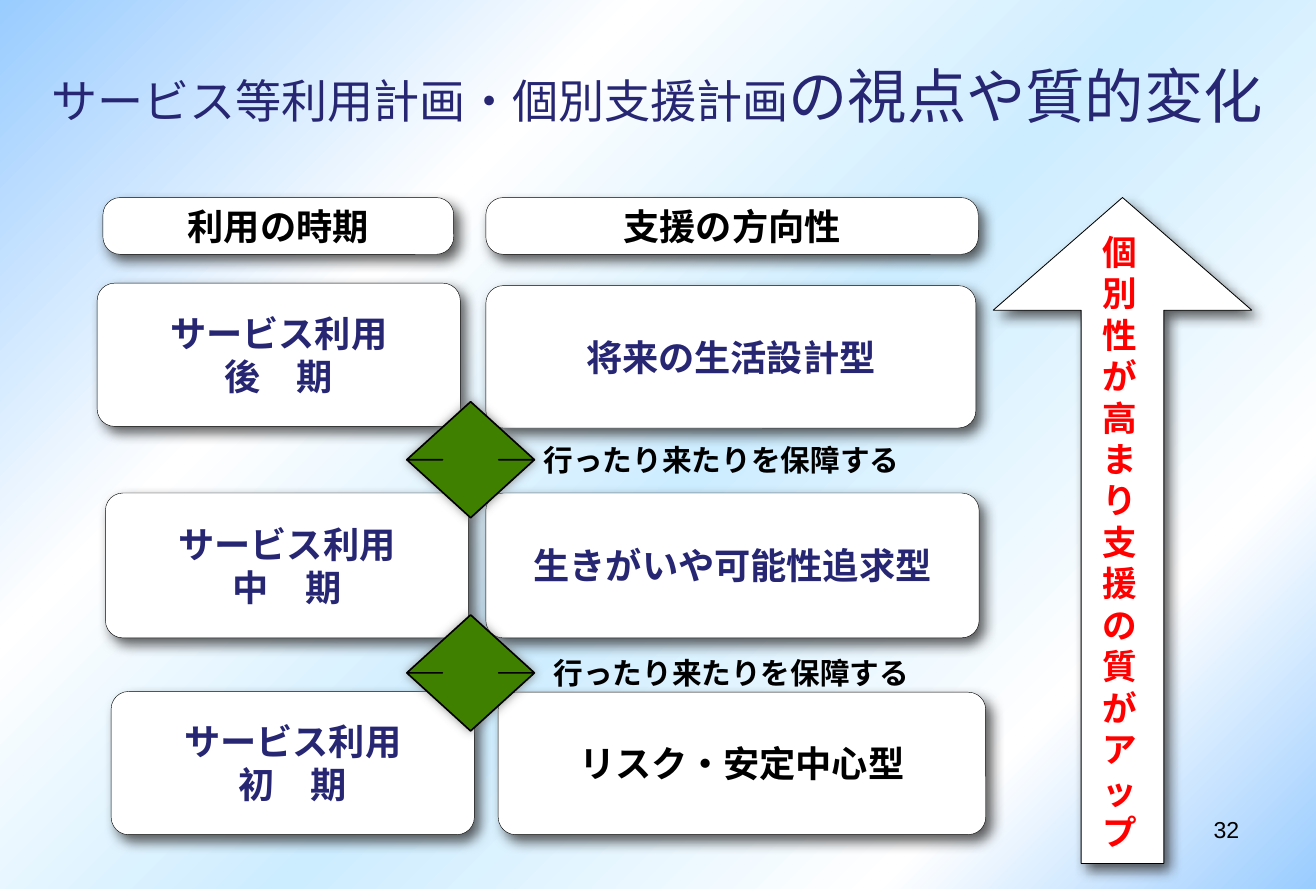
from lxml.etree import SubElement
from pptx import Presentation
from pptx.dml.color import RGBColor
from pptx.enum.shapes import MSO_SHAPE as Preset
from pptx.enum.text import MSO_ANCHOR as Anchor, PP_ALIGN as Align
from pptx.oxml.ns import qn
from pptx.util import Pt

BLACK = RGBColor(0x00, 0x00, 0x00)
WHITE = RGBColor(0xFF, 0xFF, 0xFF)
NAVY = RGBColor(0x26, 0x26, 0x73)
RED = RGBColor(0xFF, 0x00, 0x00)
GREEN = RGBColor(0x40, 0x80, 0x00)
CHARCOAL = RGBColor(0x33, 0x33, 0x33)
GRAY = RGBColor(0x80, 0x80, 0x80)
SKY = RGBColor(0x99, 0xCC, 0xFF)
PALE_SKY = RGBColor(0xCC, 0xEC, 0xFF)
GOTHIC = "Noto Sans CJK JP"
SHADOW = (CHARCOAL, 8, 5, 50)
GLOW = (GRAY, 6, 0, 0)


def write(frame, paragraphs, color, face=GOTHIC, bold=True, align=Align.CENTER,
          anchor=Anchor.MIDDLE, margins=(0, 0), wrap=True, spacing=None):
    across, down = (Pt(margin) for margin in margins)
    layout = dict(margin_left=across, margin_right=across, margin_top=down,
                  margin_bottom=down, word_wrap=wrap, vertical_anchor=anchor)
    for key, value in layout.items():
        setattr(frame, key, value)
    for index, runs in enumerate(paragraphs):
        paragraph = frame.add_paragraph() if index else frame.paragraphs[0]
        paragraph.alignment = align
        if spacing:
            paragraph.line_spacing = Pt(spacing)
        for text, size in runs:
            run = paragraph.add_run()
            run.text = text
            for key, value in dict(name=face, size=Pt(size), bold=bold).items():
                setattr(run.font, key, value)
            run.font.color.rgb = color
            SubElement(run.font._element, qn("a:ea"), typeface=face)


def draw(preset, box, adjustments, fill, line_width, shadow):
    shape = slide.shapes.add_shape(preset, *map(Pt, box))
    for index, value in enumerate(adjustments):
        shape.adjustments[index] = value
    shape.fill.solid()
    shape.fill.fore_color.rgb = fill
    shape.line.color.rgb = BLACK
    shape.line.width = Pt(line_width)
    shape.shadow.inherit = False
    shade, blur, distance, angle = shadow
    effects = shape._element.spPr.find(qn("a:effectLst"))
    outer = SubElement(effects, qn("a:outerShdw"), blurRad=str(Pt(blur)),
                       dist=str(Pt(distance)), dir=str(angle * 60000), rotWithShape="0")
    tint = SubElement(outer, qn("a:srgbClr"), val=str(shade))
    SubElement(tint, qn("a:alpha"), val="80000")
    return shape


deck = Presentation()
deck.slide_width, deck.slide_height = Pt(799), Pt(540)
slide = deck.slides.add_slide(deck.slide_layouts[5])

backdrop = slide.background.fill
backdrop.gradient()
backdrop.gradient_angle = 315
stops = slide.element.find(".//" + qn("a:gsLst"))
for stop in list(stops):
    stops.remove(stop)
for percent, color in [(0, SKY), (29, WHITE), (53, PALE_SKY), (80, WHITE), (100, SKY)]:
    stop = SubElement(stops, qn("a:gs"), pos=str(percent * 1000))
    SubElement(stop, qn("a:srgbClr"), val=str(color))

title = slide.shapes.title
for key, value in dict(left=25, top=6, width=748, height=103).items():
    setattr(title, key, Pt(value))
write(title.text_frame,
      [[("サービス等利用計画・個別支援計画", 28), ("の視点や質的変化", 36)]],
      NAVY, bold=False, margins=(2, 2))

cards = [
    ((302.5, 420.5, 296, 86.5), ["リスク・安定中心型"], BLACK, GOTHIC),
    ((67.5, 420, 220.5, 87), ["サービス利用", "初　期"], NAVY, GOTHIC),
    ((64, 299.5, 220.5, 88), ["サービス利用", "中　期"], NAVY, GOTHIC),
    ((59, 172, 220.5, 87), ["サービス利用", "後　期"], NAVY, GOTHIC),
    ((295, 299.5, 299.5, 88), ["生きがいや可能性追求型"], NAVY, GOTHIC),
    ((295, 173.5, 297.5, 86.5), ["将来の生活設計型"], NAVY, GOTHIC),
    ((295, 120, 299, 34.5), ["支援の方向性"], BLACK, "Arial"),
    ((62.5, 120, 213, 34.5), ["利用の時期"], BLACK, "Arial"),
]
for box, lines, color, face in cards:
    card = draw(Preset.ROUNDED_RECTANGLE, box, [10.55 / box[3]], WHITE, 0.25, SHADOW)
    write(card.text_frame, [[(line, 22)] for line in lines], color, face,
          spacing=26 if len(lines) > 1 else None)

draw(Preset.UP_ARROW, (603, 120, 157, 404.5), [0.32, 0.436], WHITE, 0.5, SHADOW)
quality = slide.shapes.add_textbox(Pt(660), Pt(154), Pt(39.6), Pt(350))
write(quality.text_frame, [[("個別性が高まり支援の質がアップ", 21)]], RED, spacing=25.2)

for arrow_top, label_left, label_top in [(244, 329, 268.5), (373.5, 335, 398)]:
    draw(Preset.UP_DOWN_ARROW, (247, arrow_top, 77.5, 70.5), [0.32, 0.44], GREEN, 1, GLOW)
    back_and_forth = slide.shapes.add_textbox(Pt(label_left), Pt(label_top), Pt(218), Pt(21.5))
    write(back_and_forth.text_frame, [[("行ったり来たりを保障する", 18)]], BLACK, wrap=False)

page_number = slide.shapes.add_textbox(Pt(573), Pt(492), Pt(186.5), Pt(37.5))
write(page_number.text_frame, [[("32", 14)]], BLACK, "Arial", bold=False,
      align=Align.RIGHT, anchor=Anchor.TOP, margins=(7.2, 3.6))

deck.save("out.pptx")
